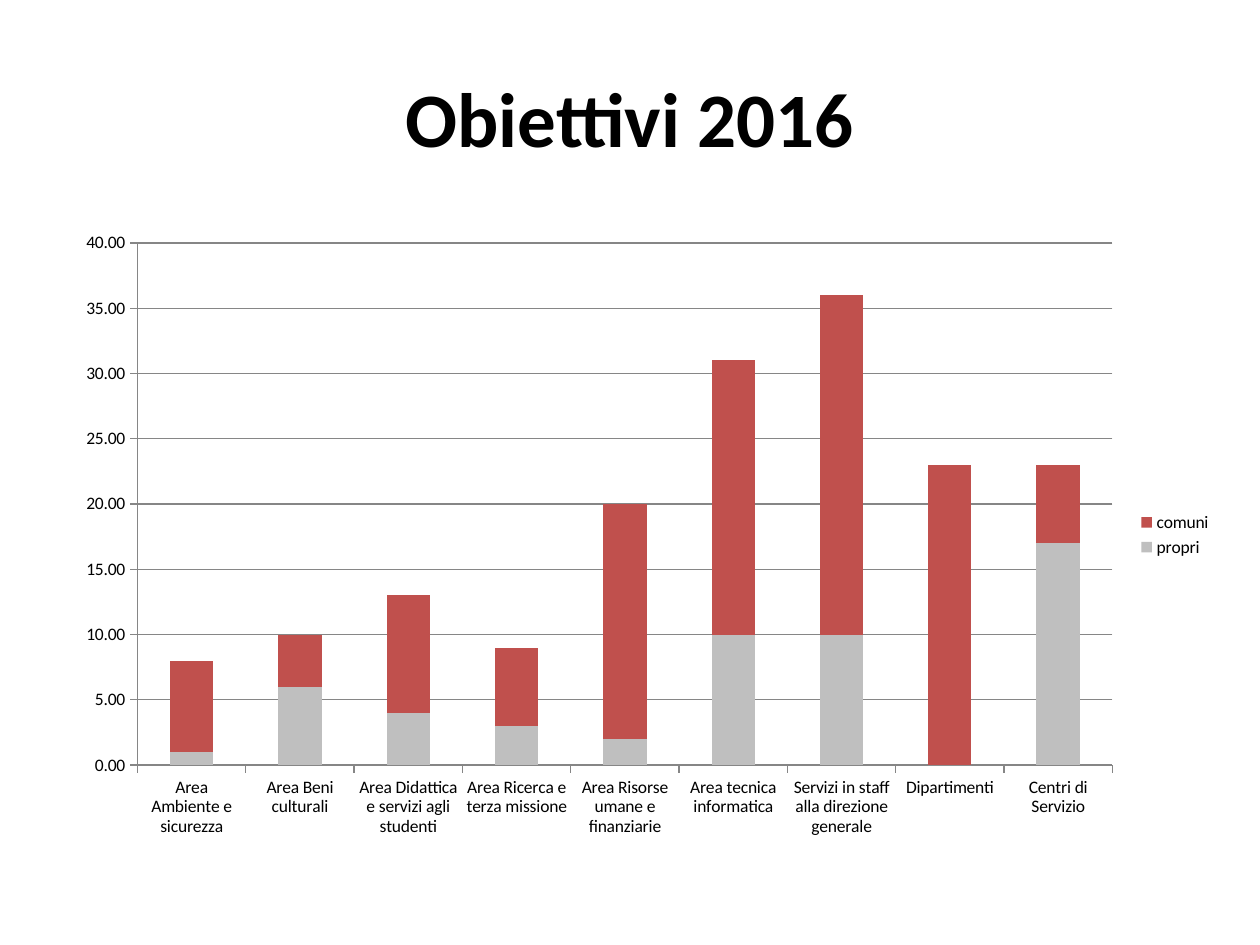
from typing import NamedTuple

from pptx import Presentation
from pptx.chart.data import CategoryChartData
from pptx.dml.color import RGBColor
from pptx.enum.chart import XL_CHART_TYPE as ChartType
from pptx.enum.chart import XL_LEGEND_POSITION as LegendPosition
from pptx.enum.chart import XL_TICK_MARK as TickMark
from pptx.enum.text import MSO_ANCHOR as Anchor
from pptx.enum.text import PP_ALIGN as Align
from pptx.util import Inches, Pt

FONT = "Calibri"
COLORS = {"text": "000000", "line": "868686", "propri": "BFBFBF", "comuni": "C0504D"}


class Area(NamedTuple):
    name: str
    propri: int
    comuni: int


AREAS = [
    Area("Area Ambiente e sicurezza", 1, 7),
    Area("Area Beni culturali", 6, 4),
    Area("Area Didattica e servizi agli studenti", 4, 9),
    Area("Area Ricerca e terza missione", 3, 6),
    Area("Area Risorse umane e finanziarie", 2, 18),
    Area("Area tecnica informatica", 10, 21),
    Area("Servizi in staff alla direzione generale", 10, 26),
    Area("Dipartimenti", 0, 23),
    Area("Centri di Servizio", 17, 6),
]


def rgb(key: str) -> RGBColor:
    return RGBColor.from_string(COLORS[key])


def style_font(font, size: float, bold: bool = False) -> None:
    font.name = FONT
    font.size = Pt(size)
    font.bold = bold
    font.color.rgb = rgb("text")


def style_line(line) -> None:
    line.color.rgb = rgb("line")
    line.width = Pt(0.75)


def add_title(slide, wording: str) -> None:
    title = slide.shapes.add_textbox(Inches(0.5), Inches(0.3), Inches(9), Inches(1.25))
    frame = title.text_frame
    frame.word_wrap = True
    frame.vertical_anchor = Anchor.MIDDLE
    heading = frame.paragraphs[0]
    heading.alignment = Align.CENTER
    run = heading.add_run()
    run.text = wording
    style_font(run.font, 44, bold=True)


def add_goals_chart(slide) -> None:
    goals = CategoryChartData(number_format="0.00")
    goals.categories = [area.name for area in AREAS]
    for kind in ("propri", "comuni"):
        goals.add_series(kind, [getattr(area, kind) for area in AREAS])
    chart = slide.shapes.add_chart(
        ChartType.COLUMN_STACKED,
        Inches(0.5), Inches(1.75), Inches(9.22), Inches(4.99), goals,
    ).chart
    chart.has_title = False
    style_font(chart.font, 10)

    plot = chart.plots[0]
    plot.gap_width = 150
    plot.overlap = 100
    plot.vary_by_categories = False
    for series in plot.series:
        series.format.fill.solid()
        series.format.fill.fore_color.rgb = rgb(series.name)

    for axis in (chart.category_axis, chart.value_axis):
        axis.major_tick_mark = TickMark.OUTSIDE
        axis.minor_tick_mark = TickMark.NONE
        style_line(axis.format.line)
    values = chart.value_axis
    values.minimum_scale = 0
    values.maximum_scale = 40
    values.major_unit = 5
    values.has_major_gridlines = True
    style_line(values.major_gridlines.format.line)
    values.tick_labels.number_format = "0.00"
    values.tick_labels.number_format_is_linked = False

    chart.has_legend = True
    chart.legend.position = LegendPosition.RIGHT
    chart.legend.include_in_layout = False


def main() -> None:
    """Build the slide of 2016 goals by area."""
    deck = Presentation()
    deck.slide_width = Inches(10)
    deck.slide_height = Inches(7.5)
    slide = deck.slides.add_slide(deck.slide_layouts[6])
    add_title(slide, "Obiettivi 2016")
    add_goals_chart(slide)
    deck.save("out.pptx")


if __name__ == "__main__":
    main()
